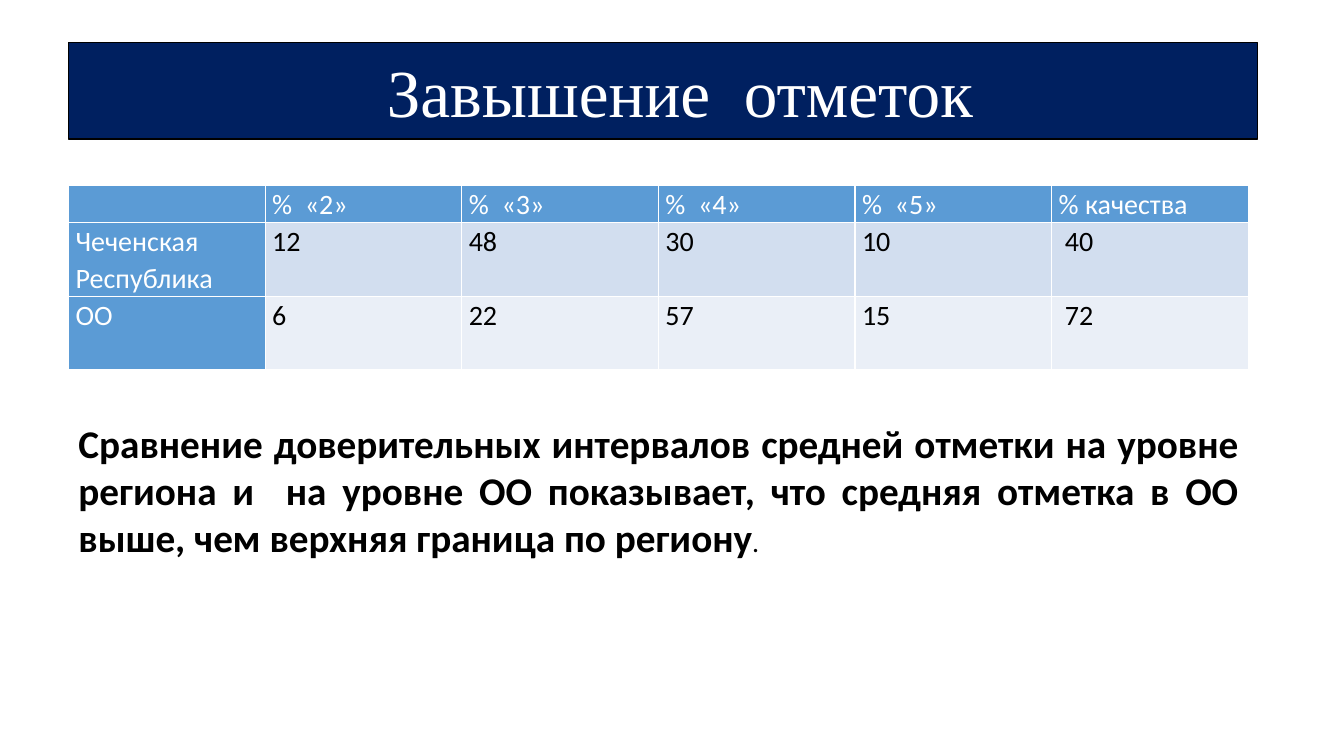
from dataclasses import dataclass

from lxml import etree
from pptx import Presentation
from pptx import util as u
from pptx.dml.color import RGBColor
from pptx.enum import shapes, text
from pptx.oxml import ns


@dataclass(frozen=True)
class Theme:
    navy: str = "002060"
    blue: str = "5B9BD5"
    bands: tuple = ("D2DEEF", "EAEFF7")
    white: str = "FFFFFF"
    black: str = "000000"
    title_font: str = "Times New Roman"
    body_font: str = "Calibri"
    title_size: int = 48
    body_size: int = 28
    table_size: int = 20


THEME = Theme()

GRADES = [
    ["", "%  «2»", "%  «3»", "%  «4»", "%  «5»", "% качества"],
    ["Чеченская Республика", "12", "48", "30", "10", " 40"],
    ["ОО", "6", "22", "57", "15", " 72"],
]
CONCLUSION = (
    "Сравнение доверительных интервалов средней отметки на уровне региона и  "
    "на уровне ОО показывает, что средняя отметка в ОО выше, "
    "чем верхняя граница по региону"
)


def inches(box):
    return [u.Inches(length) for length in box]


def paint(fill, color):
    fill.solid()
    fill.fore_color.rgb = RGBColor.from_string(color)


def add_span(para, words, size, color, font=THEME.body_font, bold=False):
    span = para.add_run()
    span.text = words
    span.font.name = font
    span.font.size = u.Pt(size)
    span.font.bold = bold
    span.font.color.rgb = RGBColor.from_string(color)


def add_borders(cell, color, width=1):
    """Line all four sides; borders must come before the cell fill."""
    properties = cell._tc.get_or_add_tcPr()
    for index, side in enumerate(("lnL", "lnR", "lnT", "lnB")):
        line = etree.Element(ns.qn(f"a:{side}"), w=str(u.Pt(width)))
        solid = etree.SubElement(line, ns.qn("a:solidFill"))
        etree.SubElement(solid, ns.qn("a:srgbClr"), val=color)
        properties.insert(index, line)


def add_title(page, box, words):
    banner = page.shapes.add_shape(shapes.MSO_SHAPE.RECTANGLE, *inches(box))
    banner.shadow.inherit = False
    paint(banner.fill, THEME.navy)
    paint(banner.line.fill, THEME.black)
    banner.line.width = u.Pt(1)
    frame = banner.text_frame
    frame.word_wrap = True
    frame.vertical_anchor = text.MSO_ANCHOR.MIDDLE
    frame.margin_left = u.Inches(0.44)  # title sits slightly right of centre
    para = frame.paragraphs[0]
    para.alignment = text.PP_ALIGN.CENTER
    add_span(para, words, THEME.title_size, THEME.white, THEME.title_font)


def add_grades(page, box, rows, header_height=0.37):
    left, top, width, height = box
    table = page.shapes.add_table(len(rows), len(rows[0]), *inches(box)).table
    for column in table.columns:
        column.width = u.Inches(width / len(rows[0]))
    body_height = (height - header_height) / (len(rows) - 1)
    for r, values in enumerate(rows):
        table.rows[r].height = u.Inches(body_height if r else header_height)
        for c, value in enumerate(values):
            heading = r == 0 or c == 0
            cell = table.cell(r, c)
            cell.margin_left = cell.margin_right = u.Inches(0.07)
            cell.margin_top = cell.margin_bottom = 0
            paint(cell.fill, THEME.blue if heading else THEME.bands[r - 1])
            add_borders(cell, THEME.white)
            para = cell.text_frame.paragraphs[0]
            para.line_spacing = 1.07
            if value:
                add_span(para, value, THEME.table_size,
                         THEME.white if heading else THEME.black)


def add_conclusion(page, box, words):
    frame = page.shapes.add_textbox(*inches(box)).text_frame
    frame.word_wrap = True
    para = frame.paragraphs[0]
    para.alignment = text.PP_ALIGN.JUSTIFY
    add_span(para, words, THEME.body_size, THEME.black, bold=True)
    add_span(para, ".", THEME.table_size, THEME.black)


def main():
    deck = Presentation()
    deck.slide_width, deck.slide_height = u.Inches(13.33), u.Inches(7.5)
    page = deck.slides.add_slide(deck.slide_layouts[6])
    # Title banner, grade table and conclusion share the left edge
    left, width = 0.68, 11.7
    add_title(page, (left, 0.42, 11.79, 0.96), "Завышение  отметок")
    add_grades(page, (left, 1.84, width, 1.83), GRADES)
    add_conclusion(page, (left, 4.11, width, 1.51), CONCLUSION)
    deck.save("out.pptx")


if __name__ == "__main__":
    main()
